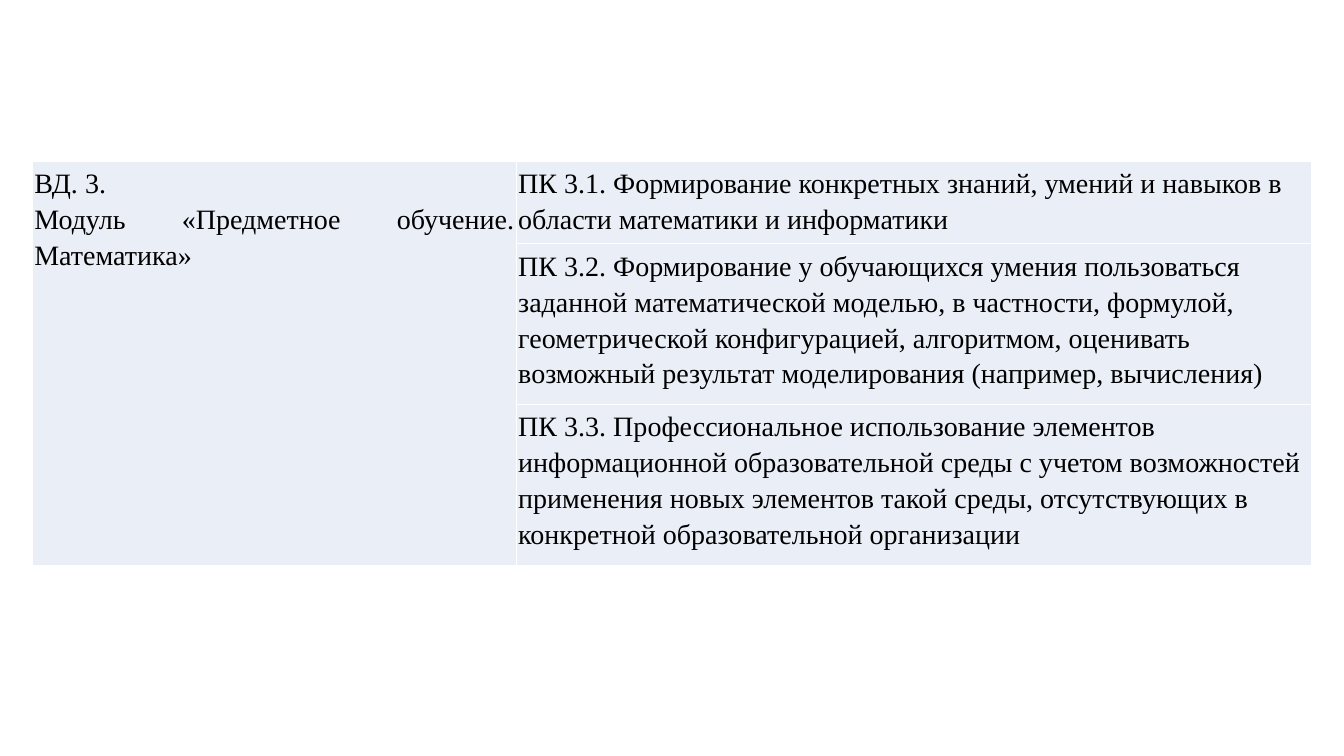
"""Build a slide with a table of module competencies."""
from dataclasses import dataclass

from lxml.etree import SubElement
from pptx import Presentation
from pptx.dml.color import RGBColor as Color
from pptx.enum.text import MSO_ANCHOR as Anchor, PP_ALIGN as Align
from pptx.oxml.ns import qn
from pptx.util import Inches, Pt


@dataclass(frozen=True)
class Theme:
    font: str = "Times New Roman"
    size: int = 20
    line_spacing: float = 1.15
    text: str = "000000"
    fill: str = "EAEFF7"
    border: str = "FFFFFF"
    border_width: int = 1


MODULE = ["ВД. 3.", "Модуль «Предметное обучение. Математика»"]
COMPETENCIES = [
    "ПК 3.1. Формирование конкретных знаний, умений и навыков в области "
    "математики и информатики",
    "ПК 3.2. Формирование у обучающихся умения пользоваться заданной "
    "математической моделью, в частности, формулой, геометрической "
    "конфигурацией, алгоритмом, оценивать возможный результат "
    "моделирования (например, вычисления)",
    "ПК 3.3. Профессиональное использование элементов информационной "
    "образовательной среды с учетом возможностей применения новых "
    "элементов такой среды, отсутствующих в конкретной образовательной "
    "организации",
]
COLUMN_WIDTHS = [4.8, 7.89]
ROW_HEIGHTS = [0.82, 1.59, 1.6]


class SlideBuilder:
    def __init__(self, slide, theme):
        self.slide = slide
        self.theme = theme

    def add_table(self, left, top, widths, heights):
        frame = self.slide.shapes.add_table(
            len(heights), len(widths), Inches(left), Inches(top),
            Inches(sum(widths)), Inches(sum(heights)))
        table = frame.table
        table.first_row = False
        table.horz_banding = False
        for column, width in zip(table.columns, widths):
            column.width = Inches(width)
        for row, height in zip(table.rows, heights):
            row.height = Inches(height)
        for cell in table.iter_cells():
            self.style_cell(cell)
        return table

    def style_cell(self, cell):
        cell.margin_left = cell.margin_right = Inches(0.02)
        cell.margin_top = cell.margin_bottom = Inches(0.03)
        cell.vertical_anchor = Anchor.TOP
        properties = cell._tc.get_or_add_tcPr()
        for side in ("a:lnL", "a:lnR", "a:lnT", "a:lnB"):
            line = SubElement(properties, qn(side),
                              w=str(Pt(self.theme.border_width)))
            solid = SubElement(line, qn("a:solidFill"))
            SubElement(solid, qn("a:srgbClr"), val=self.theme.border)
        cell.fill.solid()
        cell.fill.fore_color.rgb = Color.from_string(self.theme.fill)

    def write_cell(self, cell, texts, alignment):
        frame = cell.text_frame
        for index, text in enumerate(texts):
            paragraph = frame.add_paragraph() if index else frame.paragraphs[0]
            paragraph.alignment = alignment
            paragraph.line_spacing = self.theme.line_spacing
            run = paragraph.add_run()
            run.text = text
            run.font.name = self.theme.font
            run.font.size = Pt(self.theme.size)
            run.font.color.rgb = Color.from_string(self.theme.text)


def main():
    presentation = Presentation()
    presentation.slide_width = Inches(13.33)
    presentation.slide_height = Inches(7.5)
    slide = presentation.slides.add_slide(presentation.slide_layouts[6])
    builder = SlideBuilder(slide, Theme())

    table = builder.add_table(0.32, 1.6, COLUMN_WIDTHS, ROW_HEIGHTS)
    module_cell = table.cell(0, 0)
    module_cell.merge(table.cell(len(COMPETENCIES) - 1, 0))
    builder.write_cell(module_cell, MODULE, Align.JUSTIFY)
    for row, competency in enumerate(COMPETENCIES):
        builder.write_cell(table.cell(row, 1), [competency], Align.LEFT)

    presentation.save("out.pptx")


if __name__ == "__main__":
    main()
